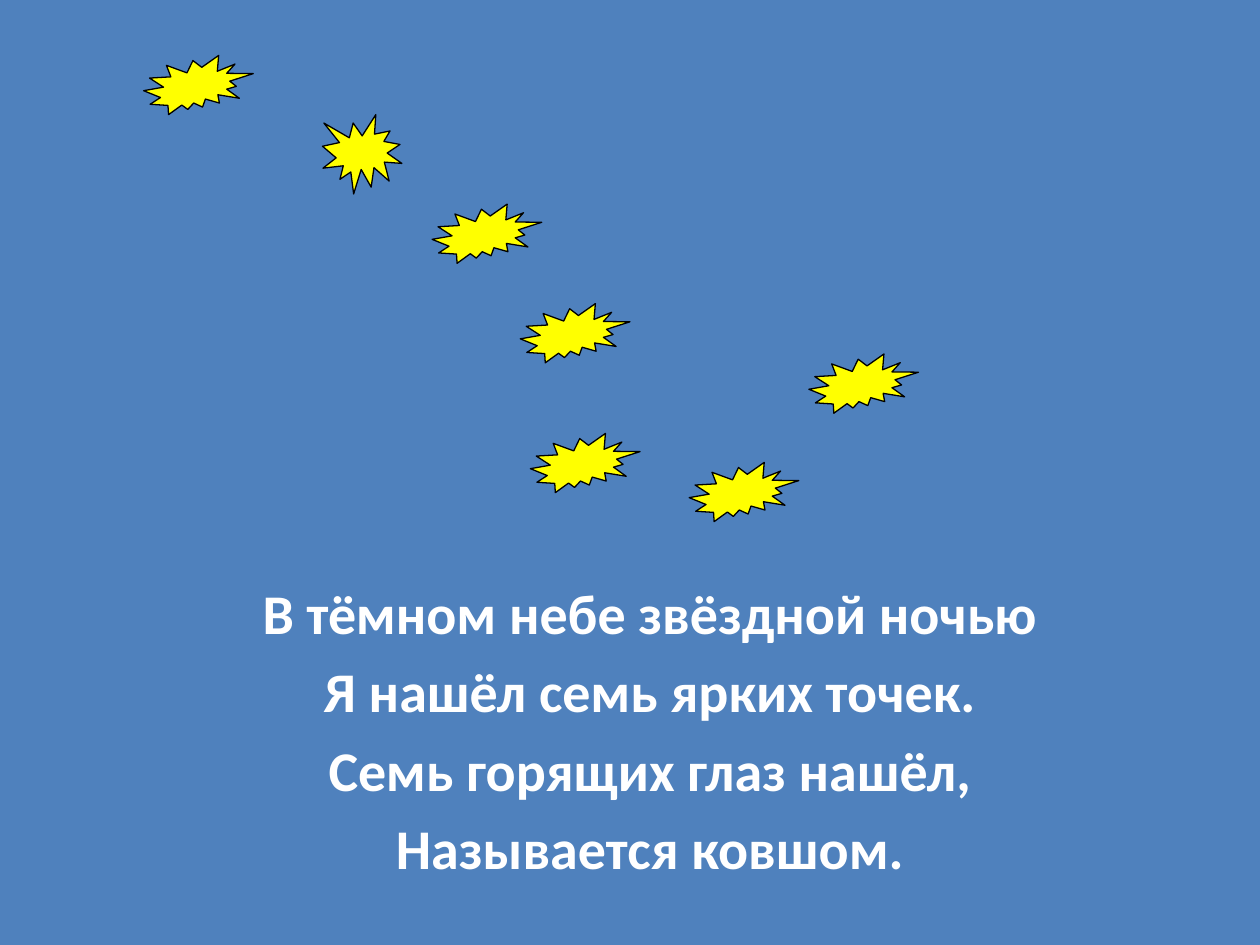
"""Build a slide with the seven stars of the Big Dipper and a verse about them."""
from pptx import Presentation
from pptx.dml.color import RGBColor
from pptx.enum.shapes import MSO_SHAPE
from pptx.enum.text import MSO_ANCHOR, PP_ALIGN
from pptx.util import Inches, Pt

ROUND_STAR = MSO_SHAPE.EXPLOSION1
WIDE_STAR = MSO_SHAPE.EXPLOSION2
CENTER = PP_ALIGN.CENTER
TOP = MSO_ANCHOR.TOP

COLORS = {"sky": "4F81BD", "star": "FFFF00", "outline": "000000", "verse": "FFFFFF"}
STAR_SIZES = {ROUND_STAR: (0.63, 0.63), WIDE_STAR: (0.87, 0.47)}
STARS = [
    (ROUND_STAR, 2.56, 0.91),
    (WIDE_STAR, 1.14, 0.44),
    (WIDE_STAR, 4.21, 3.44),
    (WIDE_STAR, 4.13, 2.41),
    (WIDE_STAR, 3.43, 1.62),
    (WIDE_STAR, 5.47, 3.67),
    (WIDE_STAR, 6.42, 2.81),
]
VERSE = [
    "В тёмном небе звёздной ночью",
    "Я нашёл семь ярких точек.",
    "Семь горящих глаз нашёл,",
    "Называется ковшом.",
]
VERSE_BOX = (0.83, 4.54, 8.66, 2.96)
FONT_SIZE = 32


def color(name):
    return RGBColor.from_string(COLORS[name])


def add_star(s, kind, left, top):
    star = s.shapes.add_shape(kind, *map(Inches, (left, top, *STAR_SIZES[kind])))
    star.shadow.inherit = False
    star.fill.solid()
    star.fill.fore_color.rgb = color("star")
    star.line.color.rgb = color("outline")
    star.line.width = Pt(0.75)


def add_verse(s):
    tf = s.shapes.add_textbox(*map(Inches, VERSE_BOX)).text_frame
    tf.word_wrap = True
    tf.vertical_anchor = TOP
    tf.text = "\n".join(VERSE)
    for i, p in enumerate(tf.paragraphs):
        p.alignment = CENTER
        p.space_before = Pt(0.2 * FONT_SIZE if i else 0)
        for r in p.runs:
            r.font.name = "Calibri"
            r.font.size = Pt(FONT_SIZE)
            r.font.bold = True
            r.font.color.rgb = color("verse")


def main():
    prs = Presentation()
    prs.slide_width, prs.slide_height = Inches(10), Inches(7.5)
    s = prs.slides.add_slide(prs.slide_layouts[6])
    s.background.fill.solid()
    s.background.fill.fore_color.rgb = color("sky")
    for star in STARS:
        add_star(s, *star)
    add_verse(s)
    prs.save("out.pptx")


if __name__ == "__main__":
    main()
